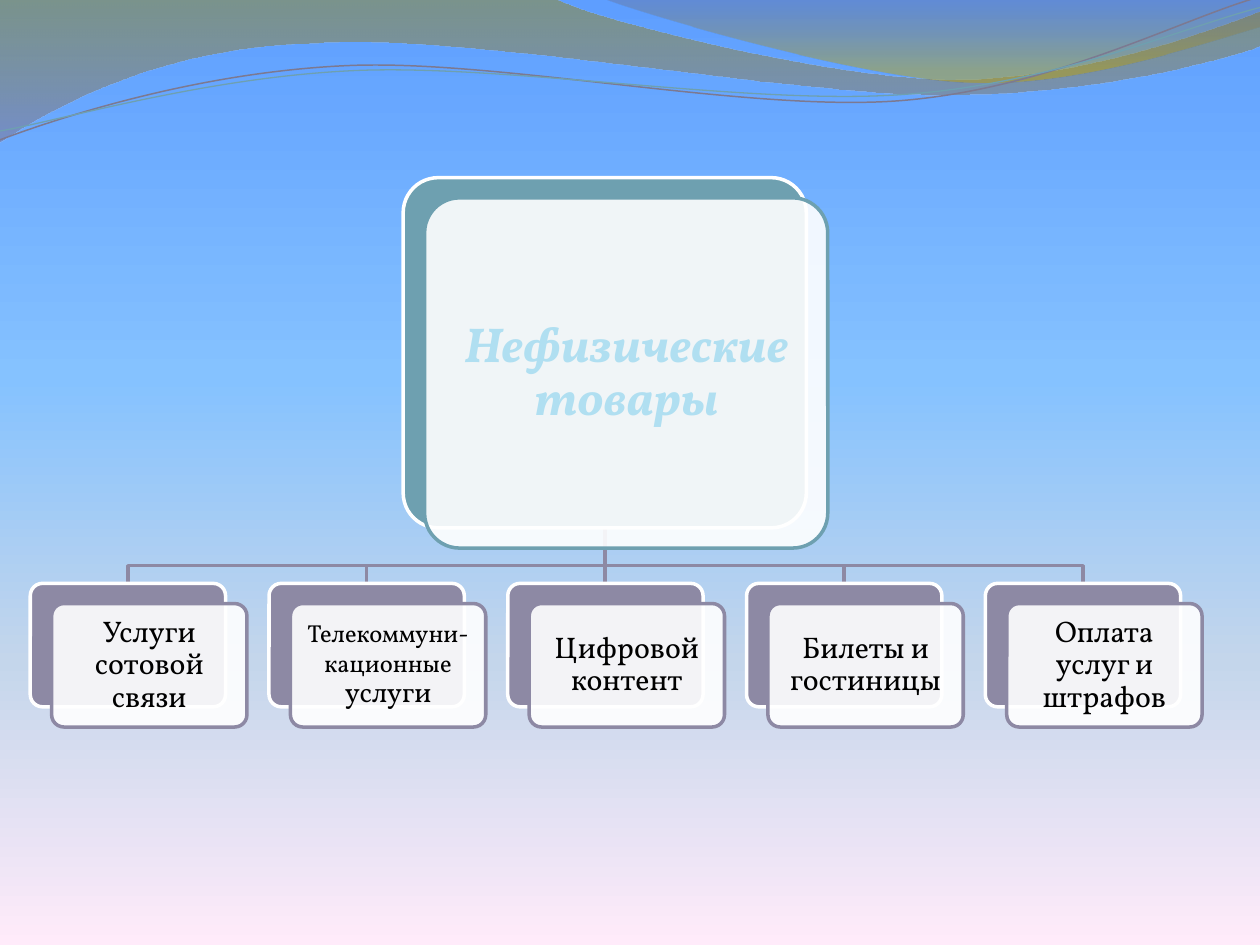
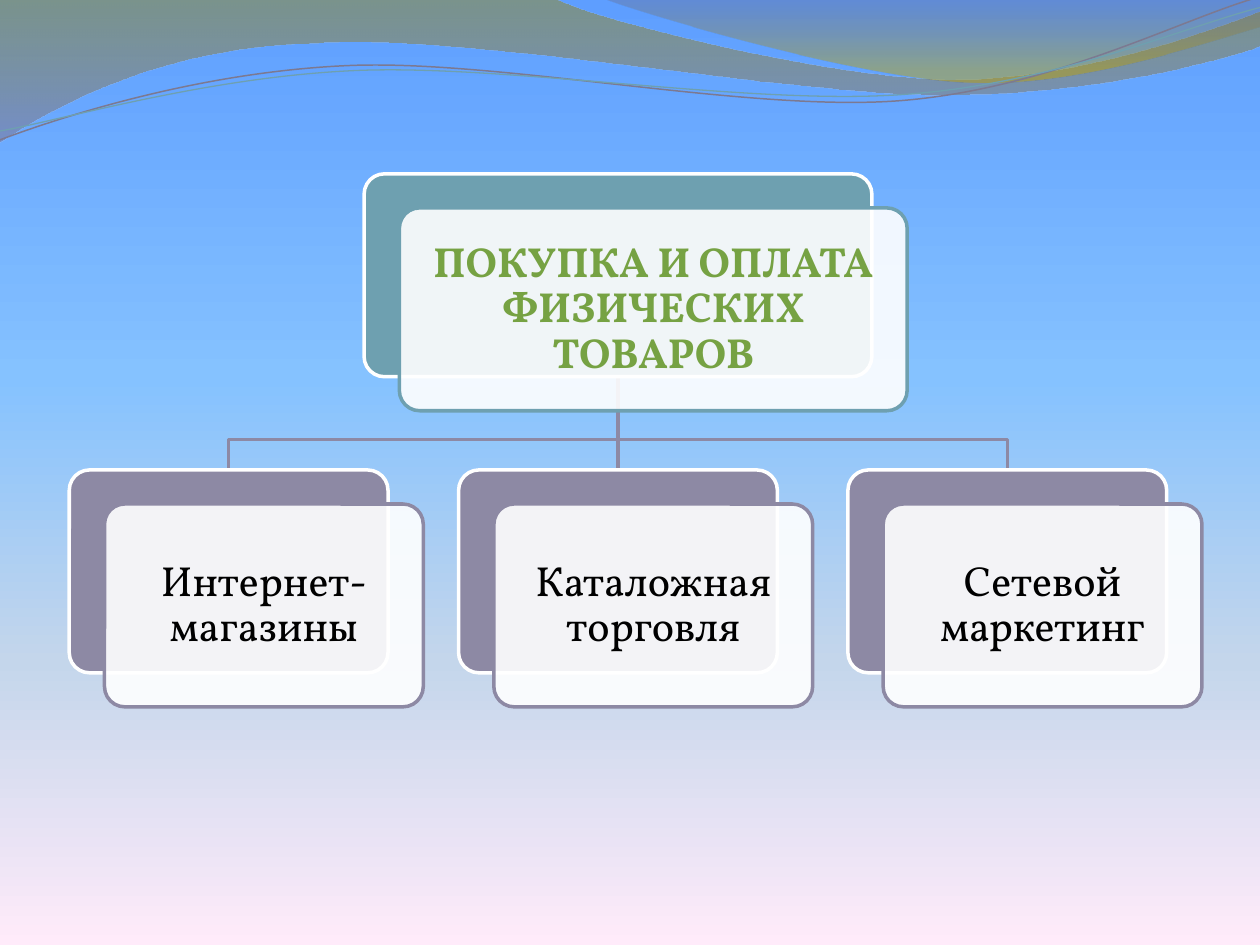
"""Build two tree diagrams of goods under a shared wave header."""
import math
from dataclasses import dataclass

from lxml import etree
from pptx import Presentation
from pptx import util as u
from pptx.dml.color import RGBColor
from pptx.enum import shapes, text
from pptx.oxml.ns import qn

FACE = "Vollkorn"
TEAL, MAUVE, WHITE, BLACK = "6EA0B0", "8D89A4", "FFFFFF", "000000"
SKY = [(0, "5E9EFF", 100), (40, "85C2FF", 100), (70, "C4D6EB", 100), (100, "FFEBFA", 100)]


@dataclass
class Wave:
    start: tuple
    steps: list
    stops: list | None = None
    line: str = ""
    width: float = 0
    turn: float = 0
    pivot: tuple = (0, 0)


@dataclass
class Box:
    left: float
    top: float
    width: float
    height: float

    @property
    def mid(self) -> float:
        return self.left + self.width / 2

    @property
    def base(self) -> float:
        return self.top + self.height

    def shift(self, dx: float, dy: float) -> "Box":
        return Box(self.left + dx, self.top + dy, self.width, self.height)

    def place(self) -> list:
        return [u.Inches(v) for v in (self.left, self.top, self.width, self.height)]


@dataclass
class Style:
    size: float
    tint: str = BLACK
    bold: bool = False
    slant: bool = False
    inset: float = 0.1


@dataclass
class Leaf:
    runs: list
    size: float


@dataclass
class Tree:
    title: str
    style: Style
    root: Box
    first: Box
    step: float
    shift: tuple
    drop: float
    inset: float
    leaves: list


WAVES = [
    Wave((0, 0), [
        (4.4, -0.01), (4.76, 0.17, 6.64, 0.63, 7.58, 0.63),
        (8.53, 0.63, 9.58, 0.26, 10, 0.09), (10.01, 0.36),
        (9.83, 0.44, 8.7, 0.76, 7.46, 0.75), (6.22, 0.75, 3.82, 0.28, 2.57, 0.34),
        (1.29, 0.36, 0.46, 0.83, -0.01, 1.13), (0, 0),
    ], [(0, "9E8700", 45), (100, "7B769C", 55)]),
    Wave((4.79, -0.01), [
        (5.09, 0.11, 6.82, 0.62, 7.69, 0.65), (8.56, 0.69, 9.61, 0.32, 10, 0.21),
        (10, 0), (4.79, -0.01),
    ], [(0, "66627C", 30), (80, "BDA100", 45)]),
    Wave((0, 1.11), [
        (0.48, 0.93, 1.58, 0.57, 2.77, 0.52), (3.95, 0.47, 5.93, 0.89, 7.13, 0.8),
        (8.33, 0.71, 9.38, 0.15, 9.98, -0.02),
    ], line="7C7991", width=0.85, turn=-2.7, pivot=(4.99, 0.57)),
    Wave((0, 1.04), [
        (0.47, 0.96, 1.64, 0.61, 2.83, 0.56), (4.03, 0.51, 5.97, 0.84, 7.17, 0.75),
        (8.36, 0.67, 9.41, 0.21, 10, 0.06),
    ], line=TEAL, width=0.75, turn=-2.7, pivot=(5, 0.59)),
]

TREES = [
    Tree("Нефизические товары", Style(28, "B0DFF1", True, True, 0.15),
         Box(3.2, 1.41, 3.2, 2.78), Box(0.24, 4.63, 1.55, 0.98),
         1.895, (0.17, 0.16), 0.14, 0.07, [
             Leaf(["Услуги сотовой связи"], 17),
             Leaf(["Телекоммуни-кационные", " услуги"], 14),
             Leaf(["Цифровой контент"], 17),
             Leaf(["Билеты и гостиницы"], 17),
             Leaf(["Оплата услуг и штрафов"], 17),
         ]),
    Tree("ПОКУПКА И ОПЛАТА ФИЗИЧЕСКИХ ТОВАРОВ", Style(24, "76A243", True, False, 0.15),
         Box(2.89, 1.38, 4.03, 1.61), Box(0.55, 3.73, 2.53, 1.61),
         3.09, (0.28, 0.27), 0.24, 0.1, [
             Leaf(["Интернет-магазины"], 24),
             Leaf(["Каталожная торговля"], 24),
             Leaf(["Сетевой маркетинг"], 24),
         ]),
]


def rgb(tint: str) -> RGBColor:
    return RGBColor.from_string(tint)


def fade(node, share: float) -> None:
    etree.SubElement(node, qn("a:alpha"), val=str(int(share * 1000)))


def blend(fill, root, stops: list) -> None:
    """Give a fill a downward gradient with any number of stops."""
    fill.gradient()
    fill.gradient_angle = 270
    marks = root.find(".//" + qn("a:gsLst"))
    for old in list(marks):
        marks.remove(old)
    for pos, tint, share in stops:
        mark = etree.SubElement(marks, qn("a:gs"), pos=str(pos * 1000))
        fade(etree.SubElement(mark, qn("a:srgbClr"), val=tint), share)


def spin(point: tuple, pivot: tuple, angle: float) -> tuple:
    """Turn a point clockwise about a pivot by an angle in degrees."""
    dx, dy = point[0] - pivot[0], point[1] - pivot[1]
    cos, sin = math.cos(math.radians(angle)), math.sin(math.radians(angle))
    return pivot[0] + dx * cos - dy * sin, pivot[1] + dx * sin + dy * cos


def draw_path(slide, points: list, close: bool = False):
    spots = [(u.Inches(x), u.Inches(y)) for x, y in points]
    pen = slide.shapes.build_freeform(*spots[0])
    pen.add_line_segments(spots[1:], close=close)
    shape = pen.convert_to_shape()
    shape.shadow.inherit = False
    return shape


def bend_path(shape, steps: list) -> None:
    """Replace each run of three lines that stands for a curve by the curve."""
    lines = iter(shape.element.findall(".//" + qn("a:lnTo")))
    for step in steps:
        group = [next(lines) for _ in range(len(step) // 2)]
        if len(group) == 3:
            curve = etree.Element(qn("a:cubicBezTo"))
            group[0].addprevious(curve)
            for line in group:
                curve.append(line[0])
                line.getparent().remove(line)


def stroke(shape, tint: str, width: float) -> None:
    shape.line.color.rgb = rgb(tint)
    shape.line.width = u.Pt(width)


def draw_wave(slide, wave: Wave):
    points = [wave.start]
    for step in wave.steps:
        points += zip(step[::2], step[1::2])
    points = [spin(p, wave.pivot, -wave.turn) for p in points]
    shape = draw_path(slide, points, bool(wave.stops))
    bend_path(shape, wave.steps)
    shape.rotation = wave.turn
    if wave.stops:
        blend(shape.fill, shape.element, wave.stops)
        shape.line.fill.background()
    else:
        shape.fill.background()
        stroke(shape, wave.line, wave.width)
    return shape


def widen(shape, width: float) -> None:
    """Give an upright line a box of some width, with the line in its middle."""
    size = u.Inches(width)
    shape.left, shape.width = shape.left - size // 2, size
    shape.element.find(".//" + qn("a:path")).set("w", str(size))
    for spot in shape.element.iter(qn("a:pt")):
        spot.set("x", str(size // 2))


def draw_link(slide, root: Box, leaf: Box, drop: float) -> None:
    """Join the root to a leaf, with a bend where they are not aligned."""
    bend = leaf.top - drop
    if abs(root.mid - leaf.mid) < 0.05:
        link = draw_path(slide, [(root.mid, root.base), (root.mid, leaf.top)])
        widen(link, 0.1)
    else:
        link = draw_path(slide, [(root.mid, root.base), (root.mid, bend),
                                 (leaf.mid, bend), (leaf.mid, leaf.top)])
    link.fill.background()
    stroke(link, MAUVE, 2)


def draw_card(slide, box: Box, fill: str, line: str):
    card = slide.shapes.add_shape(shapes.MSO_SHAPE.ROUNDED_RECTANGLE, *box.place())
    card.adjustments[0] = 0.1
    card.shadow.inherit = False
    card.fill.solid()
    card.fill.fore_color.rgb = rgb(fill)
    stroke(card, line, 2)
    return card


def draw_pair(slide, box: Box, tint: str, shift: tuple):
    """Draw a solid card with a translucent one in front; return the front."""
    draw_card(slide, box, tint, WHITE)
    front = draw_card(slide, box.shift(*shift), WHITE, tint)
    fade(front.element.spPr.find(qn("a:solidFill"))[0], 90)
    return front


def write(shape, runs: list, style: Style) -> None:
    frame = shape.text_frame
    frame.word_wrap = True
    frame.auto_size = text.MSO_AUTO_SIZE.NONE
    frame.vertical_anchor = text.MSO_ANCHOR.MIDDLE
    frame.margin_left = frame.margin_right = u.Inches(style.inset)
    frame.margin_top = frame.margin_bottom = u.Inches(style.inset)
    para = frame.paragraphs[0]
    para.alignment = text.PP_ALIGN.CENTER
    para.line_spacing = 0.9
    font = para.font
    font.name, font.size = FACE, u.Pt(style.size)
    font.bold, font.italic = style.bold, style.slant
    font.color.rgb = rgb(style.tint)
    for words in runs:
        para.add_run().text = words
    for run in para.runs[1:]:
        run.font.size = u.Pt(style.size + 2)


def draw_tree(slide, tree: Tree) -> None:
    boxes = [tree.first.shift(i * tree.step, 0) for i in range(len(tree.leaves))]
    for box in reversed(boxes):
        draw_link(slide, tree.root, box, tree.drop)
    draw_pair(slide, tree.root, TEAL, tree.shift)
    title = slide.shapes.title
    title.left, title.top, title.width, title.height = tree.root.shift(*tree.shift).place()
    write(title, [tree.title], tree.style)
    slide.shapes.element.append(title.element)
    for box, leaf in zip(boxes, tree.leaves):
        card = draw_pair(slide, box, MAUVE, tree.shift)
        write(card, leaf.runs, Style(leaf.size, inset=tree.inset))


def main() -> None:
    deck = Presentation()
    deck.slide_width, deck.slide_height = u.Inches(10), u.Inches(7.5)
    master, layout = deck.slide_master, deck.slide_layouts[5]
    blend(master.background.fill, master.element, SKY)
    slides = [deck.slides.add_slide(layout) for _ in TREES]
    for wave in WAVES:
        layout.shapes.element.append(draw_wave(slides[0], wave).element)
    for slide, tree in zip(slides, TREES):
        draw_tree(slide, tree)
    deck.save("out.pptx")


if __name__ == "__main__":
    main()
